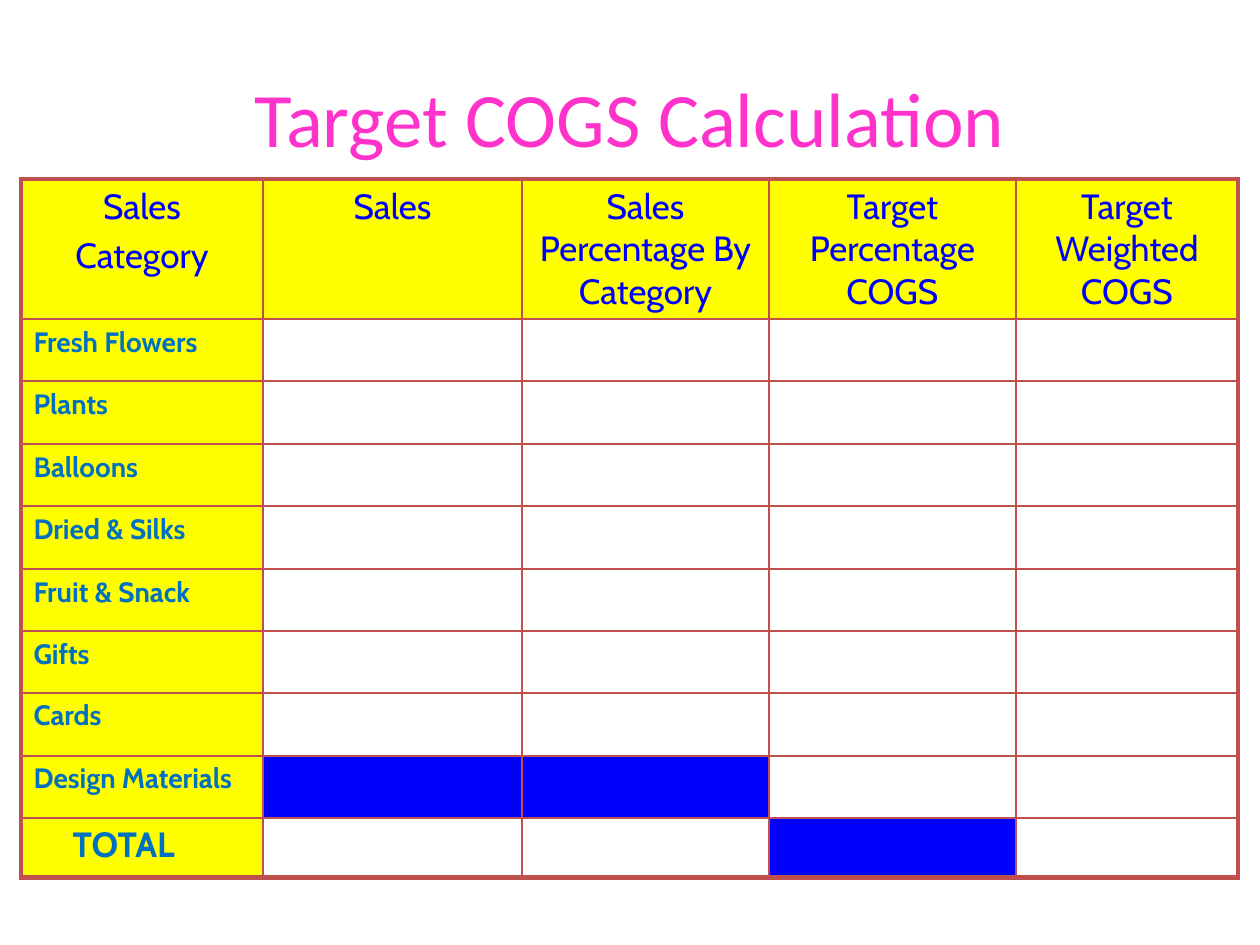
from dataclasses import dataclass

from lxml import etree
from pptx import Presentation
from pptx import util as u
from pptx.dml.color import RGBColor
from pptx.enum import text
from pptx.oxml.ns import qn

PX_PER_INCH = 126


@dataclass(frozen=True)
class Theme:
    title_font: str = "Calibri"
    table_font: str = "Cabin"
    title_color: str = "FF33CC"
    heading_color: str = "0000FF"
    category_color: str = "0070C0"
    label_fill: str = "FFFF00"
    blocked_fill: str = "0000FF"
    border_color: str = "C0504D"
    title_pt: int = 44
    heading_pt: int = 20
    category_pt: int = 16
    paragraph_gap_pt: int = 4
    inner_border_pt: int = 1
    outer_border_pt: int = 3


@dataclass(frozen=True)
class Category:
    name: str
    height: int
    blocked: tuple[int, ...] = ()
    size: int = 16
    indent: int = 0


THEME = Theme()
TABLE_LEFT, TABLE_TOP, HEADING_HEIGHT = 21, 179, 140
COLUMN_WIDTHS = (242, 259, 247, 247, 222)
HEADINGS = (
    "Sales\nCategory",
    "Sales",
    "Sales Percentage By Category",
    "Target Percentage COGS",
    "Target Weighted COGS",
)
CATEGORIES = (
    Category("Fresh Flowers", 62),
    Category("Plants", 63),
    Category("Balloons", 62),
    Category("Dried & Silks", 63),
    Category("Fruit & Snack", 62),
    Category("Gifts", 62),
    Category("Cards", 63),
    Category("Design Materials", 62, blocked=(1, 2)),
    Category("TOTAL", 60, blocked=(3,), size=THEME.heading_pt, indent=39),
)


def px(length: int) -> u.Emu:
    return u.Emu(round(length * u.Inches(1) / PX_PER_INCH))


def style_text(frame, font: str, size: int, color: str, bold: bool = False,
               align=text.PP_ALIGN.LEFT) -> None:
    for index, paragraph in enumerate(frame.paragraphs):
        paragraph.alignment = align
        if index:
            paragraph.space_before = u.Pt(THEME.paragraph_gap_pt)
        for run in paragraph.runs:
            run.font.name = font
            run.font.size = u.Pt(size)
            run.font.bold = bold
            run.font.color.rgb = RGBColor.from_string(color)


def add_title(slide, title: str) -> None:
    box = slide.shapes.add_textbox(px(63), px(38), px(1134), px(158))
    frame = box.text_frame
    frame.word_wrap = True
    frame.vertical_anchor = text.MSO_ANCHOR.MIDDLE
    frame.text = title
    style_text(frame, THEME.title_font, THEME.title_pt, THEME.title_color,
               align=text.PP_ALIGN.CENTER)


def set_borders(cell, outer_sides: dict[str, bool]) -> None:
    """Draw all four sides, with the heavy line on the table's outer edge."""
    properties = cell._tc.get_or_add_tcPr()
    for side, is_outer in outer_sides.items():
        width = THEME.outer_border_pt if is_outer else THEME.inner_border_pt
        line = etree.SubElement(properties, qn(f"a:ln{side}"), w=str(u.Pt(width)))
        fill = etree.SubElement(line, qn("a:solidFill"))
        etree.SubElement(fill, qn("a:srgbClr"), val=THEME.border_color)


def set_fill(cell, color: str | None) -> None:
    if color is None:
        cell.fill.background()
    else:
        cell.fill.solid()
        cell.fill.fore_color.rgb = RGBColor.from_string(color)


def add_cogs_table(slide) -> None:
    heights = (HEADING_HEIGHT, *(category.height for category in CATEGORIES))
    last_row, last_column = len(heights) - 1, len(COLUMN_WIDTHS) - 1
    table = slide.shapes.add_table(
        len(heights), len(COLUMN_WIDTHS), px(TABLE_LEFT), px(TABLE_TOP),
        px(sum(COLUMN_WIDTHS)), px(sum(heights))).table
    table.first_row = table.horz_banding = False
    for column, width in zip(table.columns, COLUMN_WIDTHS):
        column.width = px(width)

    for r, height in enumerate(heights):
        table.rows[r].height = px(height)
        blocked = CATEGORIES[r - 1].blocked if r else ()
        for c in range(len(COLUMN_WIDTHS)):
            cell = table.cell(r, c)
            set_borders(cell, {"L": c == 0, "R": c == last_column,
                               "T": r == 0, "B": r == last_row})
            if r == 0 or c == 0:
                set_fill(cell, THEME.label_fill)
            else:
                set_fill(cell, THEME.blocked_fill if c in blocked else None)

    for c, heading in enumerate(HEADINGS):
        frame = table.cell(0, c).text_frame
        frame.text = heading
        style_text(frame, THEME.table_font, THEME.heading_pt,
                   THEME.heading_color, align=text.PP_ALIGN.CENTER)

    for r, category in enumerate(CATEGORIES, start=1):
        cell = table.cell(r, 0)
        cell.text_frame.text = category.name
        cell.margin_left = u.Inches(0.1) + px(category.indent)
        style_text(cell.text_frame, THEME.table_font, category.size,
                   THEME.category_color, bold=True)


def main() -> None:
    deck = Presentation()
    deck.slide_width, deck.slide_height = u.Inches(10), u.Inches(7.5)
    slide = deck.slides.add_slide(deck.slide_layouts[6])
    add_title(slide, "Target COGS Calculation")
    add_cogs_table(slide)
    deck.save("out.pptx")


if __name__ == "__main__":
    main()
